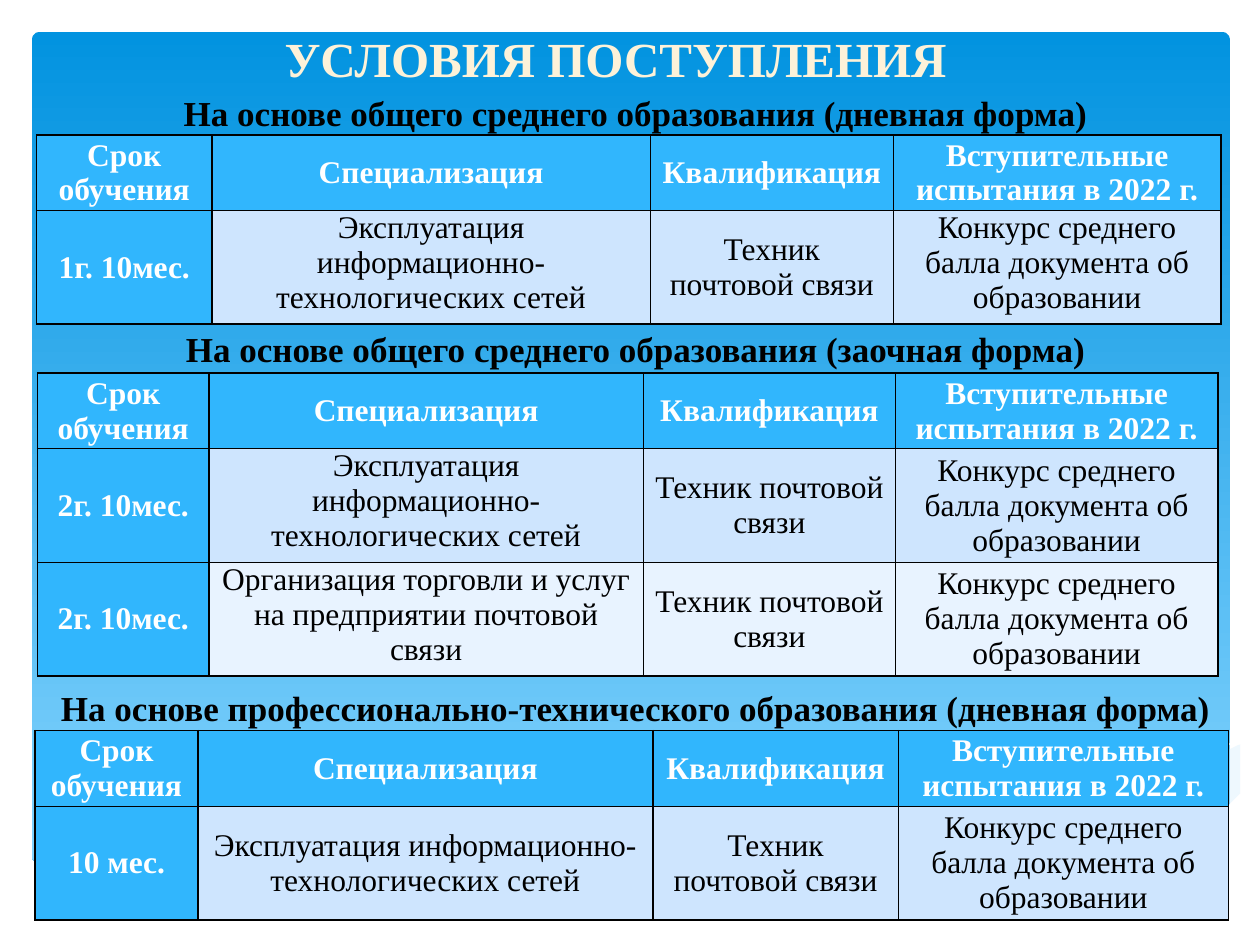
from dataclasses import dataclass

from lxml.etree import SubElement
from pptx import Presentation
from pptx.dml.color import RGBColor
from pptx.enum.shapes import MSO_SHAPE
from pptx.enum.text import MSO_ANCHOR, PP_ALIGN
from pptx.oxml import parse_xml
from pptx.oxml.ns import nsdecls, qn
from pptx.util import Cm, Pt


@dataclass(frozen=True)
class Theme:
    font: str = "Times New Roman"
    title_size: int = 28
    heading_size: int = 20
    cell_size: int = 18
    title: str = "FDF2D9"
    text: str = "000000"
    light: str = "FFFFFF"
    top: str = "0293E0"
    bottom: str = "83D3FE"
    wave: str = "C6E7FC"
    accent: str = "31B6FD"
    bands: tuple[str, str] = ("CEE5FE", "E8F3FF")


@dataclass(frozen=True)
class Wave:
    points: list[tuple[float, float]]
    color: str
    opacity: int = 100
    filled: bool = True


@dataclass(frozen=True)
class Section:
    heading: str
    heading_top: float
    left: float
    top: float
    widths: tuple[float, ...]
    rows: list[tuple[str, ...]]
    top_columns: tuple[int, ...] = ()  # body columns anchored at the top


THEME = Theme()
HEADER = ("Срок обучения", "Специализация", "Квалификация",
          "Вступительные испытания в 2022 г.")
NETWORKS = "Эксплуатация информационно-технологических сетей"
TRADE = "Организация торговли и услуг на предприятии почтовой связи"
RESULT = ("Техник почтовой связи", "Конкурс среднего балла документа об образовании")
HEADER_HEIGHT, ROW_HEIGHT = 1.52, 2.29

WAVES = [
    Wave([(24.81, 15.27), (23.42, 15.52), (21.89, 15.88), (19.81, 16.36), (16.81, 16.94),
          (18.62, 17.17), (20.7, 17.27), (22.4, 17.15), (23.8, 16.84), (24.81, 16.48)],
         THEME.wave, 29),
    Wave([(22.71, 17.15), (20.52, 16.81), (17.96, 16.31), (16, 15.85), (13.77, 15.34),
          (11.81, 15.06), (9.65, 14.91), (7.29, 15.06), (9.22, 15.34), (11.43, 15.85),
          (14.4, 16.51), (16.54, 16.92), (18.72, 17.2), (20.8, 17.27)],
         THEME.wave, 40),
    Wave([(7.87, 15.16), (9.22, 14.99), (11, 14.96), (13.54, 15.14), (16.18, 15.49),
          (19.33, 16.13), (23.06, 17.09)], THEME.light, filled=False),
    Wave([(15.6, 16.74), (18.31, 16.03), (21.26, 15.39), (23.14, 15.09), (24.79, 14.91)],
         THEME.light, filled=False),
    Wave([(24.81, 16.46), (23.62, 16.87), (21.92, 17.17), (20.14, 17.22), (17.98, 17.07),
          (15.9, 16.76), (13.44, 16.28), (11.35, 15.8), (9.27, 15.34), (7.42, 15.04),
          (5.84, 14.91), (4.5, 14.88), (3.02, 14.96), (1.93, 15.16), (1.17, 15.37),
          (0.58, 15.62), (0.58, 18.57), (24.81, 18.57)], THEME.light),
]

SECTIONS = [
    Section("На основе общего среднего образования (дневная форма)", 1.73,
            0.74, 2.72, (3.53, 8.84, 4.9, 6.6),
            [("1г. 10мес.", NETWORKS, *RESULT)], (1, 3)),
    Section("На основе общего среднего образования (заочная форма)", 6.48,
            0.76, 7.52, (3.45, 8.76, 5.08, 6.5),
            [("2г. 10мес.", NETWORKS, *RESULT), ("2г. 10мес.", TRADE, *RESULT)], (1,)),
    Section("На основе профессионально-технического образования (дневная форма)", 13.72,
            0.71, 14.73, (3.28, 9.17, 4.95, 6.65),
            [("10 мес.", NETWORKS, *RESULT)]),
]


def rgb(value: str) -> RGBColor:
    return RGBColor.from_string(value)


def write(tf, text: str, size: int, color: str, bold: bool = True) -> None:
    p = tf.paragraphs[0]
    p.text = text
    p.alignment = PP_ALIGN.CENTER
    p.font.name, p.font.size, p.font.bold = THEME.font, Pt(size), bold
    p.font.color.rgb = rgb(color)


def add_text(s, left: float, top: float, width: float, height: float,
             text: str, size: int, color: str) -> None:
    tf = s.shapes.add_textbox(Cm(left), Cm(top), Cm(width), Cm(height)).text_frame
    tf.word_wrap = True
    write(tf, text, size, color)


def add_background(s) -> None:
    sp = s.shapes.add_shape(MSO_SHAPE.ROUNDED_RECTANGLE,
                            Cm(0.64), Cm(0.64), Cm(24.16), Cm(16.76))
    sp.adjustments[0] = 0.01
    sp.shadow.inherit = False
    sp.line.fill.background()
    sp.fill.gradient()
    sp.fill.gradient_angle = 270
    for stop, color in zip(sp.fill.gradient_stops, (THEME.top, THEME.bottom)):
        stop.color.rgb = rgb(color)


def add_wave(s, wave: Wave) -> None:
    builder = s.shapes.build_freeform(*wave.points[0], scale=Cm(1))
    builder.add_line_segments(wave.points[1:], close=wave.filled)
    sp = builder.convert_to_shape()
    sp.shadow.inherit = False
    if not wave.filled:
        sp.fill.background()
        sp.line.color.rgb = rgb(wave.color)
        sp.line.width = Pt(0)
        return
    sp.line.fill.background()
    sp.fill.solid()
    sp.fill.fore_color.rgb = rgb(wave.color)
    if wave.opacity < 100:
        clr = sp.fill._xPr.find(qn("a:solidFill"))[0]
        SubElement(clr, qn("a:alpha"), val=str(wave.opacity * 1000))


def add_borders(cell) -> None:
    tcPr = cell._tc.get_or_add_tcPr()
    for side in "LRTB":
        tcPr.append(parse_xml(
            f'<a:ln{side} {nsdecls("a")} w="{Pt(1)}"><a:solidFill>'
            f'<a:srgbClr val="{THEME.text}"/></a:solidFill></a:ln{side}>'))


def add_section_table(s, section: Section) -> None:
    rows = [HEADER, *section.rows]
    heights = [HEADER_HEIGHT] + [ROW_HEIGHT] * len(section.rows)
    table = s.shapes.add_table(len(rows), len(HEADER), Cm(section.left), Cm(section.top),
                               Cm(sum(section.widths)), Cm(sum(heights))).table
    for column, width in zip(table.columns, section.widths):
        column.width = Cm(width)
    for i, texts in enumerate(rows):
        table.rows[i].height = Cm(heights[i])
        for j, text in enumerate(texts):
            cell = table.cell(i, j)
            label = i == 0 or j == 0
            at_top = i > 0 and j in section.top_columns
            cell.margin_left = cell.margin_right = Cm(0.18)
            cell.margin_top = cell.margin_bottom = 0
            cell.vertical_anchor = MSO_ANCHOR.TOP if at_top else MSO_ANCHOR.MIDDLE
            add_borders(cell)
            cell.fill.solid()
            cell.fill.fore_color.rgb = rgb(THEME.accent if label else THEME.bands[(i - 1) % 2])
            write(cell.text_frame, text, THEME.cell_size,
                  THEME.light if label else THEME.text, label)


def main() -> None:
    prs = Presentation()
    prs.slide_width, prs.slide_height = Cm(25.4), Cm(19.05)
    s = prs.slides.add_slide(prs.slide_layouts[6])
    add_background(s)
    for wave in WAVES:
        add_wave(s, wave)
    add_text(s, 2.11, 0.46, 20.6, 1.45, "УСЛОВИЯ ПОСТУПЛЕНИЯ", THEME.title_size, THEME.title)
    for section in SECTIONS:
        add_section_table(s, section)
    for section in SECTIONS:
        add_text(s, 0.71, section.heading_top, 24.21, 1.12,
                 section.heading, THEME.heading_size, THEME.text)
    prs.save("out.pptx")


if __name__ == "__main__":
    main()
